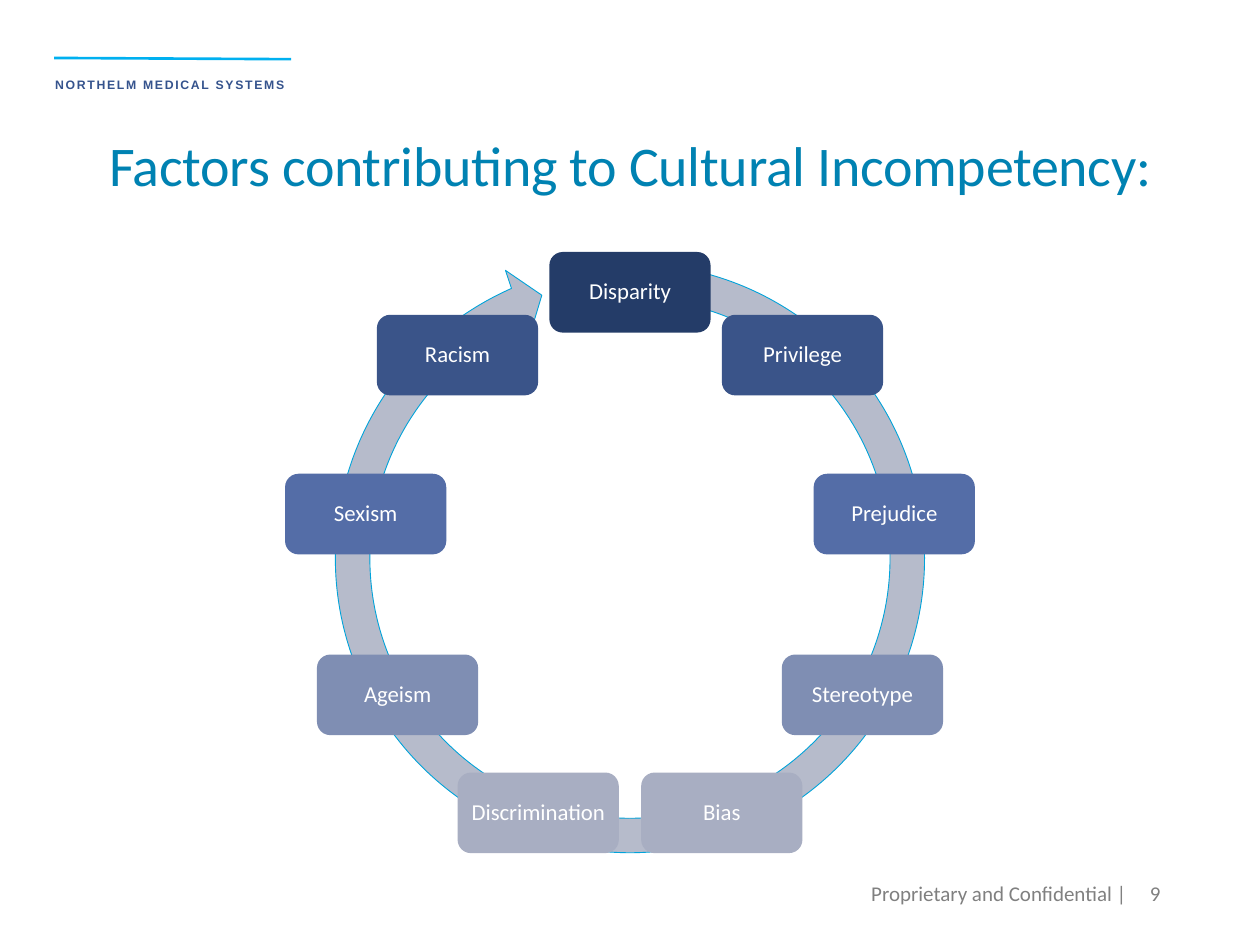
import math

import pptx
import pptx.dml.color
import pptx.enum.shapes
import pptx.enum.text
import pptx.oxml
import pptx.oxml.ns
import pptx.util

COLUMNS, ROWS = 100, 75
COLORS = {
    "brand": "35538D", "rule": "00B0F0", "title": "0082B2", "footer": "808080",
    "ring": "B6BBCB", "ring_edge": "00A3DA", "card_text": "FFFFFF",
    "level_0": "243C68", "level_1": "3A5489", "level_2": "546DA7",
    "level_3": "7F8EB3", "level_4": "A8AEC2",
}
FACTORS = ["Disparity", "Privilege", "Prejudice", "Stereotype", "Bias",
           "Discrimination", "Ageism", "Sexism", "Racism"]
CENTER = (50, 44.5)
RADIUS = 21.3
CARD_SIZE = (12.8, 6.4)

ALIGN = pptx.enum.text.PP_ALIGN
ANCHOR = pptx.enum.text.MSO_ANCHOR
SHAPE = pptx.enum.shapes.MSO_SHAPE


def rgb(name):
    return pptx.dml.color.RGBColor.from_string(COLORS[name])


class SlideBuilder:
    """Places elements by grid columns and rows on the current slide."""

    def __init__(self, presentation):
        self.column = presentation.slide_width / COLUMNS
        self.row = presentation.slide_height / ROWS
        self.slide = presentation.slides.add_slide(presentation.slide_layouts[6])

    def grid(self, *lengths):
        """Turn alternating column and row counts into slide lengths."""
        return [round(length * (self.row if index % 2 else self.column))
                for index, length in enumerate(lengths)]

    def set_text(self, shape, text, size, color, align, anchor, font="Calibri",
                 bold=False, spacing=0, wrap=True):
        """Set a shape's text; spacing is the tracking in points."""
        frame = shape.text_frame
        frame.text = text
        frame.word_wrap = wrap
        frame.vertical_anchor = anchor
        paragraph = frame.paragraphs[0]
        paragraph.alignment = align
        run = paragraph.runs[0]
        run.font.name = font
        run.font.size = pptx.util.Pt(size)
        run.font.bold = bold
        run.font.color.rgb = rgb(color)
        if spacing:
            run._r.get_or_add_rPr().set("spc", str(round(spacing * 100)))
        return paragraph

    def text(self, box, text, size, color, align=ALIGN.LEFT, anchor=ANCHOR.MIDDLE,
             **style):
        shape = self.slide.shapes.add_textbox(*self.grid(*box))
        return self.set_text(shape, text, size, color, align, anchor, **style)

    def shape(self, kind, box, fill, edge=None):
        shape = self.slide.shapes.add_shape(kind, *self.grid(*box))
        shape.shadow.inherit = False
        shape.fill.solid()
        shape.fill.fore_color.rgb = rgb(fill)
        if edge:
            shape.line.color.rgb = rgb(edge)
            shape.line.width = pptx.util.Pt(0.5)
        else:
            shape.line.fill.background()
        return shape

    def line(self, ends, color, width):
        connector = self.slide.shapes.add_connector(
            pptx.enum.shapes.MSO_CONNECTOR.STRAIGHT, *self.grid(*ends))
        connector.line.color.rgb = rgb(color)
        connector.line.width = pptx.util.Pt(width)
        properties = connector._element.spPr
        properties.append(pptx.oxml.parse_xml(
            "<a:effectLst %s/>" % pptx.oxml.ns.nsdecls("a")))

    def ring(self, box, adjustments):
        arrow = self.shape(SHAPE.CIRCULAR_ARROW, box, "ring", "ring_edge")
        for index, value in enumerate(adjustments):
            arrow.adjustments[index] = value

    def card(self, center, text, fill):
        width, height = CARD_SIZE
        box = (center[0] - width / 2, center[1] - height / 2, width, height)
        shape = self.shape(SHAPE.ROUNDED_RECTANGLE, box, fill)
        frame = shape.text_frame
        frame.margin_left = frame.margin_right = pptx.util.Inches(0.05)
        frame.margin_top = frame.margin_bottom = pptx.util.Inches(0.05)
        paragraph = self.set_text(shape, text, 13, "card_text", ALIGN.CENTER,
                                  ANCHOR.MIDDLE)
        paragraph.line_spacing = 0.9

    def cycle(self, labels):
        """Spread cards clockwise from the top, paler towards the bottom."""
        count = len(labels)
        for index, label in enumerate(labels):
            angle = 2 * math.pi * index / count
            center = (CENTER[0] + RADIUS * math.sin(angle),
                      CENTER[1] - RADIUS * math.cos(angle))
            self.card(center, label, f"level_{min(index, count - index)}")


def main():
    presentation = pptx.Presentation()
    presentation.slide_width = pptx.util.Inches(10)
    presentation.slide_height = pptx.util.Inches(7.5)
    builder = SlideBuilder(presentation)

    brand = builder.text((3.4, 4.6, 20.4, 2.9), "NORTHELM MEDICAL SYSTEMS", 7, "brand",
                         anchor=ANCHOR.TOP, font="Arial", bold=True, spacing=1,
                         wrap=False)
    brand.line_spacing = pptx.util.Pt(16)
    builder.line((4.3, 4.6, 23.1, 4.7), "rule", 1.5)

    builder.ring((25.1, 19.4, 49.8, 49.8), (0.055, 3.307, 147.579, 168.128, 0.058))
    builder.cycle(FACTORS)

    builder.text((6.9, 8.4, 86.2, 7.8), "Factors contributing to Cultural Incompetency:",
                 32, "title", ALIGN.CENTER, ANCHOR.BOTTOM, spacing=-0.2)
    builder.text((56.6, 68.9, 33.8, 4), "Proprietary and Confidential |", 12, "footer",
                 ALIGN.RIGHT)
    builder.text((88.5, 68.9, 4.6, 4), "9", 12, "footer", ALIGN.RIGHT)

    presentation.save("out.pptx")


if __name__ == "__main__":
    main()
